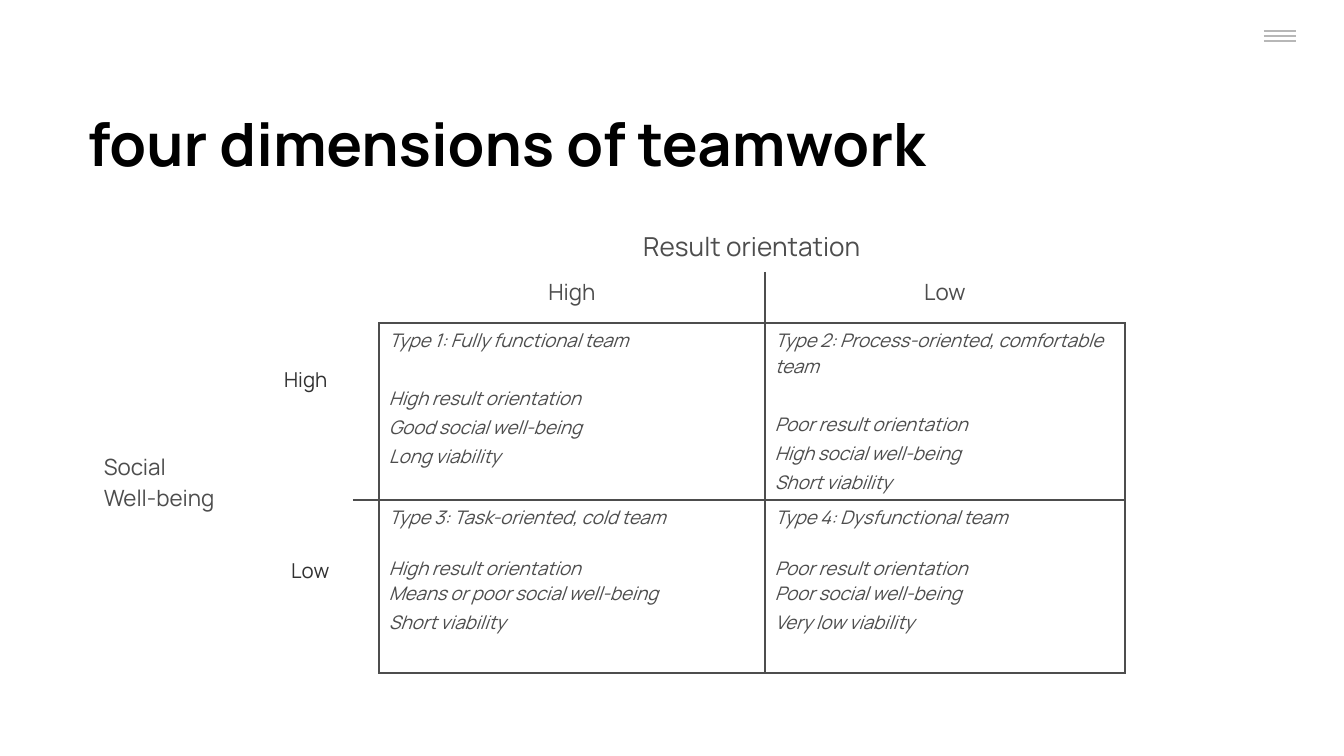
from lxml.etree import SubElement
from pptx import Presentation
from pptx.dml.color import RGBColor
from pptx.enum.shapes import MSO_CONNECTOR
from pptx.enum.text import MSO_ANCHOR, MSO_AUTO_SIZE, PP_ALIGN
from pptx.oxml.ns import qn
from pptx.util import Pt

FONT = "Manrope"
COLORS = {"title": "000000", "table": "4D4D4D", "side": "313131", "menu": "B7B7B7"}
NO_STYLE_NO_GRID = "{2D5ABB26-0587-4C30-8999-92F81FD0307C}"

TITLE = "four dimensions of teamwork"
COLUMN_WIDTHS = (259, 26, 386, 360)
ROW_HEIGHTS = (52, 40, 177, 173)
MERGES = (((0, 0), (1, 1)), ((0, 2), (0, 3)), ((2, 0), (3, 0)))

# (row, column): (text, size)
HEADINGS = {
    (0, 2): ("Result orientation", 14),
    (1, 2): ("High", 12),
    (1, 3): ("Low", 12),
}
SOCIAL = ("Social", "Well-being")

# (row, column): lines of the team type
TYPES = {
    (2, 2): ("Type 1: Fully functional team", "High result orientation",
             "Good social well-being", "Long viability"),
    (2, 3): ("Type 2: Process-oriented, comfortable team", "Poor result orientation",
             "High social well-being", "Short viability"),
    (3, 2): ("Type 3: Task-oriented, cold team", "High result orientation",
             "Means or poor social well-being", "Short viability"),
    (3, 3): ("Type 4: Dysfunctional team", "Poor result orientation",
             "Poor social well-being", "Very low viability"),
}
# Points before each line, by table row
LINE_GAPS = {2: (0, 17.5, 2, 2), 3: (0, 13.5, 0, 2)}

# (row, column): bordered sides, in the order the file format requires
BORDERS = {(1, 2): "RB", (1, 3): "LB", (2, 1): "RB", (3, 1): "RT",
           **{place: "LRTB" for place in TYPES}}

SIDE_LABELS = (("High", 271, 360, 71), ("Low", 278, 551, 68))


def px(length):
    return round(length * 914400 / 134.4)


def write(paragraph, text, size, color, bold=None, italic=None):
    run = paragraph.add_run()
    run.text = text
    font = run.font
    font.name, font.size, font.bold, font.italic = FONT, Pt(size), bold, italic
    font.color.rgb = RGBColor.from_string(COLORS[color])


def write_lines(frame, lines, gaps, size, italic=None):
    for index, (line, gap) in enumerate(zip(lines, gaps)):
        paragraph = frame.add_paragraph() if index else frame.paragraphs[0]
        if gap:
            paragraph.space_before = Pt(gap)
        write(paragraph, line, size, "table", italic=italic)


def add_borders(cell, sides):
    properties = cell._tc.get_or_add_tcPr()
    for side in sides:
        border = SubElement(properties, qn(f"a:ln{side}"), w=str(Pt(1)))
        fill = SubElement(border, qn("a:solidFill"))
        SubElement(fill, qn("a:srgbClr"), val=COLORS["table"])


def add_title(slide):
    title = slide.shapes.title
    title.left, title.top, title.width, title.height = map(px, (75, 94, 1130, 79))
    frame = title.text_frame
    frame.margin_left = frame.margin_right = px(13)
    frame.margin_top = frame.margin_bottom = px(13)
    frame.vertical_anchor = MSO_ANCHOR.TOP
    frame.auto_size = MSO_AUTO_SIZE.NONE
    frame.paragraphs[0].alignment = PP_ALIGN.LEFT
    write(frame.paragraphs[0], TITLE, 32, "title", bold=True)


def add_menu_lines(slide):
    for y in range(31, 42, 5):
        line = slide.shapes.add_connector(
            MSO_CONNECTOR.STRAIGHT, px(1264), px(y), px(1296), px(y))
        line.line.color.rgb = RGBColor.from_string(COLORS["menu"])
        line.line.width = Pt(0.75)
        SubElement(line._element.spPr, qn("a:effectLst"))


def add_matrix(slide):
    table = slide.shapes.add_table(
        len(ROW_HEIGHTS), len(COLUMN_WIDTHS), px(94), px(220),
        px(sum(COLUMN_WIDTHS)), px(sum(ROW_HEIGHTS))).table
    table.first_row = table.horz_banding = False
    table._tbl.tblPr.find(qn("a:tableStyleId")).text = NO_STYLE_NO_GRID
    for column, width in zip(table.columns, COLUMN_WIDTHS):
        column.width = px(width)
    for row, height in zip(table.rows, ROW_HEIGHTS):
        row.height = px(height)
    for first, last in MERGES:
        table.cell(*first).merge(table.cell(*last))

    for row in range(len(ROW_HEIGHTS)):
        for column in range(len(COLUMN_WIDTHS)):
            cell = table.cell(row, column)
            cell.margin_left = cell.margin_right = px(10)
            cell.margin_top = cell.margin_bottom = px(5)
            add_borders(cell, BORDERS.get((row, column), ""))
            cell.fill.background()

    for place, (text, size) in HEADINGS.items():
        paragraph = table.cell(*place).text_frame.paragraphs[0]
        paragraph.alignment = PP_ALIGN.CENTER
        write(paragraph, text, size, "table")
    table.cell(0, 2).vertical_anchor = MSO_ANCHOR.MIDDLE

    social = table.cell(2, 0)
    social.vertical_anchor = MSO_ANCHOR.MIDDLE
    social.margin_bottom = px(36)
    write_lines(social.text_frame, SOCIAL, (0, 0), 12)

    for (row, column), lines in TYPES.items():
        write_lines(table.cell(row, column).text_frame, lines, LINE_GAPS[row], 10,
                    italic=True)


def add_side_labels(slide):
    for text, left, top, width in SIDE_LABELS:
        frame = slide.shapes.add_textbox(px(left), px(top), px(width), px(39)).text_frame
        frame.word_wrap = False
        frame.auto_size = MSO_AUTO_SIZE.SHAPE_TO_FIT_TEXT
        write(frame.paragraphs[0], text, 11, "side")


def main():
    presentation = Presentation()
    presentation.slide_width, presentation.slide_height = px(1344), px(756)
    slide = presentation.slides.add_slide(presentation.slide_layouts[5])
    add_menu_lines(slide)
    add_title(slide)
    add_matrix(slide)
    add_side_labels(slide)
    presentation.save("out.pptx")


if __name__ == "__main__":
    main()
